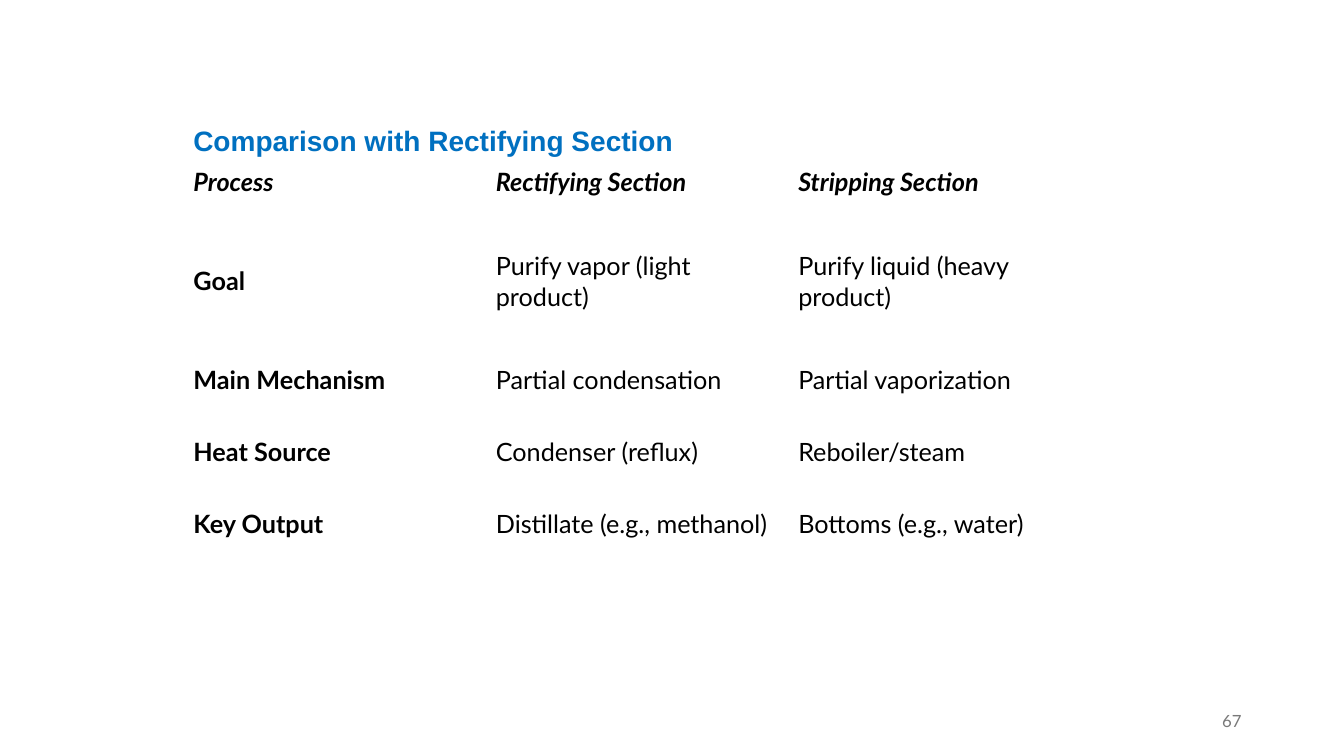
from pptx import Presentation
from pptx.dml.color import RGBColor
from pptx.enum.text import MSO_ANCHOR, PP_ALIGN
from pptx.util import Pt


def style(p, font, size, color, bold=False, italic=False):
    for r in p.runs:
        r.font.name = font
        r.font.size = Pt(size)
        r.font.bold = bold
        r.font.italic = italic
        r.font.color.rgb = RGBColor.from_string(color)


def add_text(s, text, left, top, width, height):
    tf = s.shapes.add_textbox(Pt(left), Pt(top), Pt(width), Pt(height)).text_frame
    tf.word_wrap = True
    tf.vertical_anchor = MSO_ANCHOR.MIDDLE
    tf.text = text
    return tf.paragraphs[0]


prs = Presentation()
prs.slide_width, prs.slide_height = Pt(960), Pt(540)
s = prs.slides.add_slide(prs.slide_layouts[6])

rows = [
    ("Process", "Rectifying Section", "Stripping Section"),
    ("Goal", "Purify vapor (light product)", "Purify liquid (heavy product)"),
    ("Main Mechanism", "Partial condensation", "Partial vaporization"),
    ("Heat Source", "Condenser (reflux)", "Reboiler/steam"),
    ("Key Output", "Distillate (e.g., methanol)", "Bottoms (e.g., water)"),
]
heights = [51.4, 90, 51.4, 51.4, 51.4]

table = s.shapes.add_table(
    len(rows), 3, Pt(131), Pt(104.4), Pt(648), Pt(sum(heights))
).table
table.first_row = False
table.horz_banding = False
for column in table.columns:
    column.width = Pt(216)
for i, (texts, height) in enumerate(zip(rows, heights)):
    table.rows[i].height = Pt(height)
    for j, text in enumerate(texts):
        cell = table.cell(i, j)
        cell.fill.background()
        cell.vertical_anchor = MSO_ANCHOR.MIDDLE
        cell.text = text
        style(cell.text_frame.paragraphs[0], "Lato", 18, "000000",
              bold=i == 0 or j == 0, italic=i == 0)

p = add_text(s, "67", 678, 500.5, 216, 28.8)
p.alignment = PP_ALIGN.RIGHT
style(p, "Lato", 12, "797979")

p = add_text(s, "Comparison with Rectifying Section", 131, 85, 381.6, 30.4)
style(p, "Arial", 20, "0070C0", bold=True)

prs.save("out.pptx")
